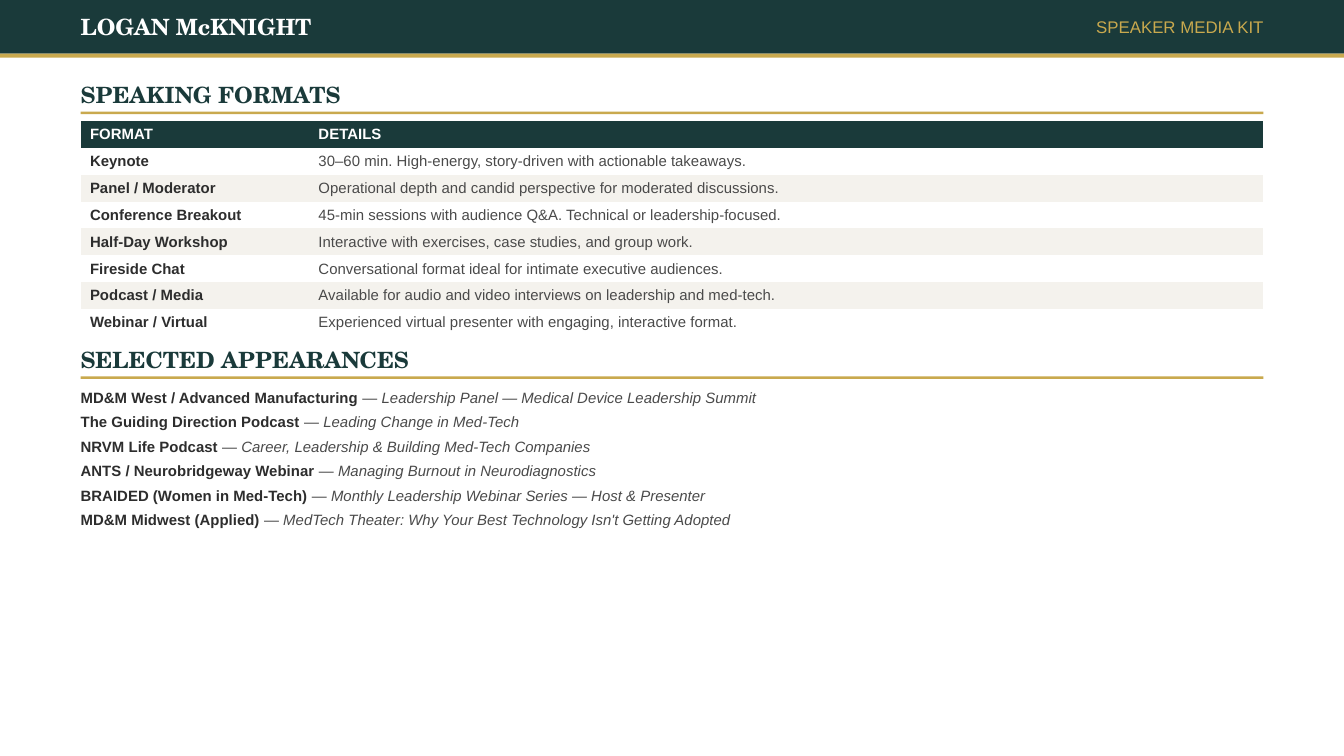
"""Build the speaking formats page of a speaker media kit."""
from pptx import Presentation
from pptx import util as u
from pptx.dml.color import RGBColor
from pptx.enum import shapes, text
from pptx.oxml.ns import qn
from pptx.oxml.xmlchemy import OxmlElement

SPEAKER, LABEL = "LOGAN McKNIGHT", "SPEAKER MEDIA KIT"
FORMATS_HEADING, APPEARANCES_HEADING = "SPEAKING FORMATS", "SELECTED APPEARANCES"
FORMATS = [
    ("FORMAT", "DETAILS"),
    ("Keynote", "30–60 min. High-energy, story-driven with actionable takeaways."),
    ("Panel / Moderator", "Operational depth and candid perspective for moderated discussions."),
    ("Conference Breakout", "45-min sessions with audience Q&A. Technical or leadership-focused."),
    ("Half-Day Workshop", "Interactive with exercises, case studies, and group work."),
    ("Fireside Chat", "Conversational format ideal for intimate executive audiences."),
    ("Podcast / Media", "Available for audio and video interviews on leadership and med-tech."),
    ("Webinar / Virtual", "Experienced virtual presenter with engaging, interactive format."),
]
APPEARANCES = [
    ("MD&M West / Advanced Manufacturing", "Leadership Panel — Medical Device Leadership Summit"),
    ("The Guiding Direction Podcast", "Leading Change in Med-Tech"),
    ("NRVM Life Podcast", "Career, Leadership & Building Med-Tech Companies"),
    ("ANTS / Neurobridgeway Webinar", "Managing Burnout in Neurodiagnostics"),
    ("BRAIDED (Women in Med-Tech)", "Monthly Leadership Webinar Series — Host & Presenter"),
    ("MD&M Midwest (Applied)", "MedTech Theater: Why Your Best Technology Isn't Getting Adopted"),
]

GREEN, GOLD, WHITE, CREAM = "1A3A3A", "C9A94E", "FFFFFF", "F4F2ED"
DARK, GREY = "2D2D2D", "4A4A4A"
SERIF, SANS = "TeX Gyre Schola", "Arial"
WIDTH = 10
HEIGHT = WIDTH * 9 / 16
MARGIN = WIDTH * 0.06
CONTENT = WIDTH - 2 * MARGIN
BAR, HEADING, ROW, LIST_ROW = 0.4, 0.25, 0.2, 0.18
FORMATS_TOP, APPEARANCES_TOP = 0.58, 2.55
FORMAT_COLUMN = 1.7
BODY_SIZE, LINE_FACTOR = 8, 1.18


def color(value):
    return RGBColor.from_string(value)


def place(shape, left, top, width, height):
    shape.left, shape.top = u.Inches(left), u.Inches(top)
    shape.width, shape.height = u.Inches(width), u.Inches(height)


def add_run(paragraph, content, *, size=BODY_SIZE, font=SANS, fill=GREY, bold=False, italic=False):
    run = paragraph.add_run()
    run.text = content
    run.font.size, run.font.name = u.Pt(size), font
    run.font.bold, run.font.italic = bold, italic
    run.font.color.rgb = color(fill)


def prepare_frame(shape, anchor=text.MSO_ANCHOR.MIDDLE):
    frame = shape.text_frame
    frame.margin_left = frame.margin_right = frame.margin_top = frame.margin_bottom = 0
    frame.word_wrap, frame.auto_size = True, text.MSO_AUTO_SIZE.NONE
    frame.vertical_anchor = anchor
    return frame


def write_line(shape, content, align=text.PP_ALIGN.LEFT, **style):
    paragraph = prepare_frame(shape).paragraphs[0]
    paragraph.alignment = align
    add_run(paragraph, content, **style)


def add_text(slide, content, box, **style):
    write_line(slide.shapes.add_textbox(*map(u.Inches, box)), content, **style)


def add_bar(slide, fill, *box):
    shape = slide.shapes.add_shape(shapes.MSO_SHAPE.RECTANGLE, *map(u.Inches, box))
    shape.shadow.inherit = False
    shape.fill.solid()
    shape.fill.fore_color.rgb = color(fill)
    shape.line.fill.background()


def add_formats_table(slide, top):
    frame = slide.shapes.add_table(
        len(FORMATS), 2, u.Inches(MARGIN), u.Inches(top),
        u.Inches(CONTENT), u.Inches(ROW * len(FORMATS)))
    for style in frame.element.iter(qn("a:tableStyleId")):
        style.text = "{2D5ABB26-0587-4C30-8999-92F81FD0307C}"
    table = frame.table
    table.horz_banding = False
    for column, width in zip(table.columns, (FORMAT_COLUMN, CONTENT - FORMAT_COLUMN)):
        column.width = u.Inches(width)
    for row, contents in enumerate(FORMATS):
        for column, content in enumerate(contents):
            cell = table.cell(row, column)
            cell.margin_left = cell.margin_right = u.Inches(0.07)
            cell.margin_top = cell.margin_bottom = u.Inches(0.03)
            cell.vertical_anchor = text.MSO_ANCHOR.MIDDLE
            cell.fill.solid()
            cell.fill.fore_color.rgb = color(GREEN if row == 0 else WHITE if row % 2 else CREAM)
            add_run(cell.text_frame.paragraphs[0], content, bold=row == 0 or column == 0,
                    fill=WHITE if row == 0 else (DARK, GREY)[column])


def fill_appearances(body, top):
    place(body, MARGIN, top, CONTENT, LIST_ROW * len(APPEARANCES))
    frame = prepare_frame(body, text.MSO_ANCHOR.TOP)
    gap = u.Pt(round(LIST_ROW * 72 - BODY_SIZE * LINE_FACTOR, 2))
    for index, (event, topic) in enumerate(APPEARANCES):
        paragraph = frame.add_paragraph() if index else frame.paragraphs[0]
        properties = paragraph._p.get_or_add_pPr()
        properties.set("marL", "0")
        properties.set("indent", "0")
        properties.append(OxmlElement("a:buNone"))
        paragraph.space_before = gap if index else u.Pt(0)
        add_run(paragraph, event, fill=DARK, bold=True)
        add_run(paragraph, " — ")
        add_run(paragraph, topic, italic=True)


def main():
    presentation = Presentation()
    presentation.slide_width, presentation.slide_height = u.Inches(WIDTH), u.Inches(HEIGHT)
    slide = presentation.slides.add_slide(presentation.slide_layouts[1])
    title, body = slide.placeholders
    heading = dict(size=12, font=SERIF, bold=True)

    add_bar(slide, GREEN, 0, 0, WIDTH, BAR)
    add_bar(slide, GOLD, 0, BAR, WIDTH, 0.03)
    add_text(slide, SPEAKER, (MARGIN, 0, 4, BAR), fill=WHITE, **heading)
    add_text(slide, LABEL, (WIDTH - MARGIN - 3.4, 0, 3.4, BAR), size=9, fill=GOLD,
             align=text.PP_ALIGN.RIGHT)

    place(title, MARGIN, FORMATS_TOP, 4, HEADING)
    write_line(title, FORMATS_HEADING, fill=GREEN, **heading)
    add_text(slide, APPEARANCES_HEADING, (MARGIN, APPEARANCES_TOP, 5, HEADING),
             fill=GREEN, **heading)
    for top in (FORMATS_TOP, APPEARANCES_TOP):
        add_bar(slide, GOLD, MARGIN, top + HEADING, CONTENT, 0.02)

    add_formats_table(slide, FORMATS_TOP + HEADING + 0.07)
    fill_appearances(body, APPEARANCES_TOP + HEADING + 0.09)
    presentation.save("out.pptx")


if __name__ == "__main__":
    main()
